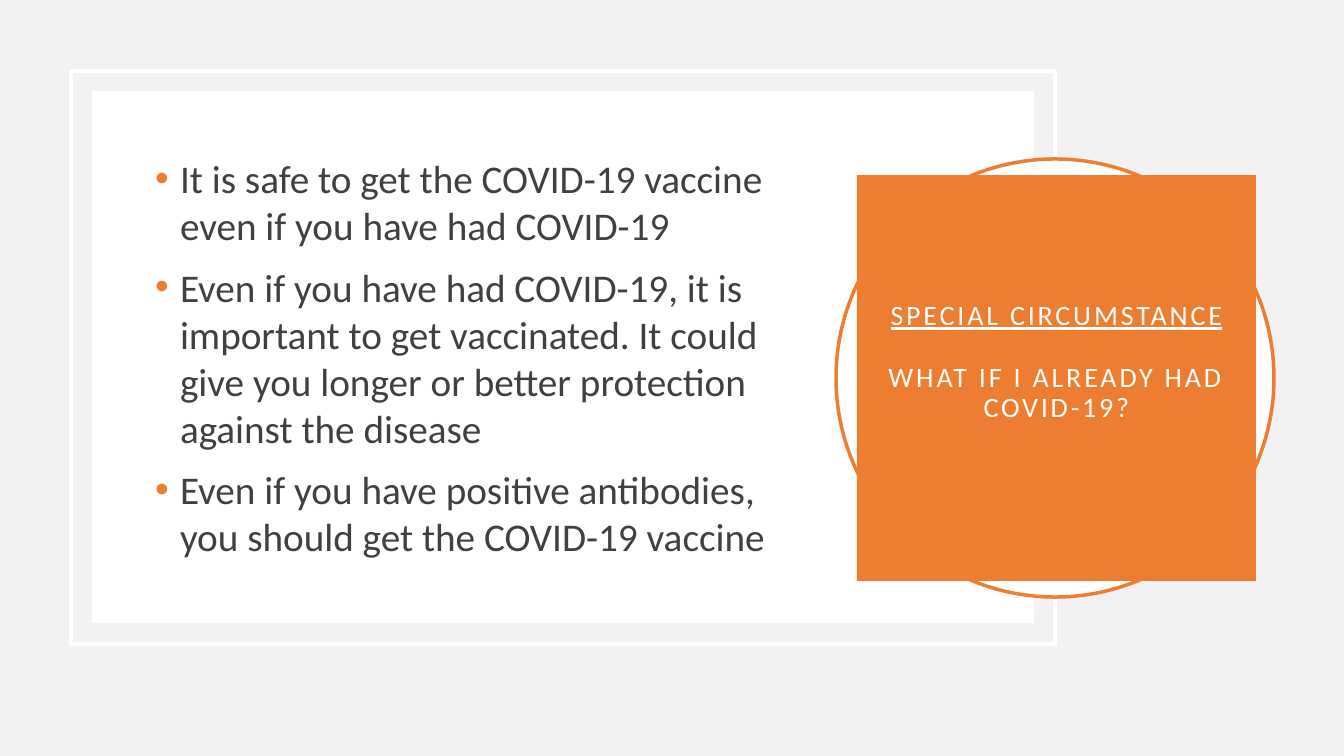
from lxml import etree
from pptx import Presentation
from pptx.dml.color import RGBColor
from pptx.enum.shapes import MSO_SHAPE
from pptx.enum.text import MSO_ANCHOR, PP_ALIGN
from pptx.oxml.ns import qn
from pptx.util import Emu, Pt

RECTANGLE = MSO_SHAPE.RECTANGLE
OVAL = MSO_SHAPE.OVAL
MIDDLE = MSO_ANCHOR.MIDDLE
LEFT = PP_ALIGN.LEFT
CENTER = PP_ALIGN.CENTER

EMU_PER_PX = 914400 / 100.8
FONT = "Calibri"
GREY, WHITE, ORANGE, INK = "F2F2F2", "FFFFFF", "ED7D31", "404040"

ADVICE = [
    "It is safe to get the COVID-19 vaccine even if you have had COVID-19",
    "Even if you have had COVID-19, it is important to get vaccinated. "
    "It could give you longer or better protection against the disease",
    "Even if you have positive antibodies, you should get the COVID-19 vaccine",
]


def px(length):
    return Emu(round(length * EMU_PER_PX))


def color(hex_value):
    return RGBColor.from_string(hex_value)


def add_shape(slide, kind, box, fill=None, line=None):
    shape = slide.shapes.add_shape(kind, *map(px, box))
    shape.shadow.inherit = False
    if fill:
        shape.fill.solid()
        shape.fill.fore_color.rgb = color(fill)
    else:
        shape.fill.background()
    if line:
        shape.line.color.rgb = color(line)
        shape.line.width = Pt(2.5)
    else:
        shape.line.fill.background()
    return shape


def set_up_frame(frame, insets):
    """Wrap and centre the text vertically; insets are left, top, right, bottom."""
    frame.word_wrap = True
    frame.vertical_anchor = MIDDLE
    (frame.margin_left, frame.margin_top,
     frame.margin_right, frame.margin_bottom) = map(px, insets)


def add_bullet(paragraph, bullet_color, indent):
    properties = paragraph._p.get_or_add_pPr()
    properties.set("marL", str(px(indent)))
    properties.set("indent", str(-px(indent)))
    holder = etree.SubElement(properties, qn("a:buClr"))
    etree.SubElement(holder, qn("a:srgbClr"), val=bullet_color)
    etree.SubElement(properties, qn("a:buFont"), typeface="Arial")
    etree.SubElement(properties, qn("a:buChar"), char="•")


def write(frame, index, text, *, size, text_color, align=LEFT, before=0,
          line_spacing=1.0, underline=False, tracking=0, bullet=None):
    """Write one paragraph; tracking is in points, bullet is a colour."""
    paragraph = frame.add_paragraph() if index else frame.paragraphs[0]
    paragraph.alignment = align
    paragraph.space_before = Pt(before)
    paragraph.line_spacing = line_spacing
    if bullet:
        add_bullet(paragraph, bullet, 25)
    run = paragraph.add_run()
    run.text = text
    run.font.name = FONT
    run.font.size = Pt(size)
    run.font.color.rgb = color(text_color)
    run.font.underline = underline
    if tracking:
        run._r.get_or_add_rPr().set("spc", str(tracking * 100))


def add_advice(slide):
    frame = slide.shapes.add_textbox(*map(px, (145, 141, 630, 432))).text_frame
    set_up_frame(frame, (10, 5, 5, 5))
    for index, text in enumerate(ADVICE):
        write(frame, index, text, size=28, text_color=INK, before=10, bullet=ORANGE)


def add_title(slide):
    add_shape(slide, OVAL, (836, 159, 438, 438), fill=WHITE, line=ORANGE)
    block = add_shape(slide, RECTANGLE, (857, 175, 399, 406), fill=ORANGE)
    set_up_frame(block.text_frame, (20, 20, 20, 51))
    style = dict(size=20, text_color=WHITE, align=CENTER, line_spacing=0.9, tracking=2)
    write(block.text_frame, 0, "SPECIAL CIRCUMSTANCE", underline=True, **style)
    write(block.text_frame, 1, "WHAT IF I ALREADY HAD COVID-19?", before=22, **style)


def main():
    presentation = Presentation()
    presentation.slide_width, presentation.slide_height = px(1344), px(756)
    slide = presentation.slides.add_slide(presentation.slide_layouts[6])
    slide.background.fill.solid()
    slide.background.fill.fore_color.rgb = color(GREY)
    add_shape(slide, RECTANGLE, (71, 71, 984, 573), line=WHITE)
    add_shape(slide, RECTANGLE, (92, 91, 942, 532), fill=WHITE)
    add_advice(slide)
    add_title(slide)
    presentation.save("out.pptx")


if __name__ == "__main__":
    main()
